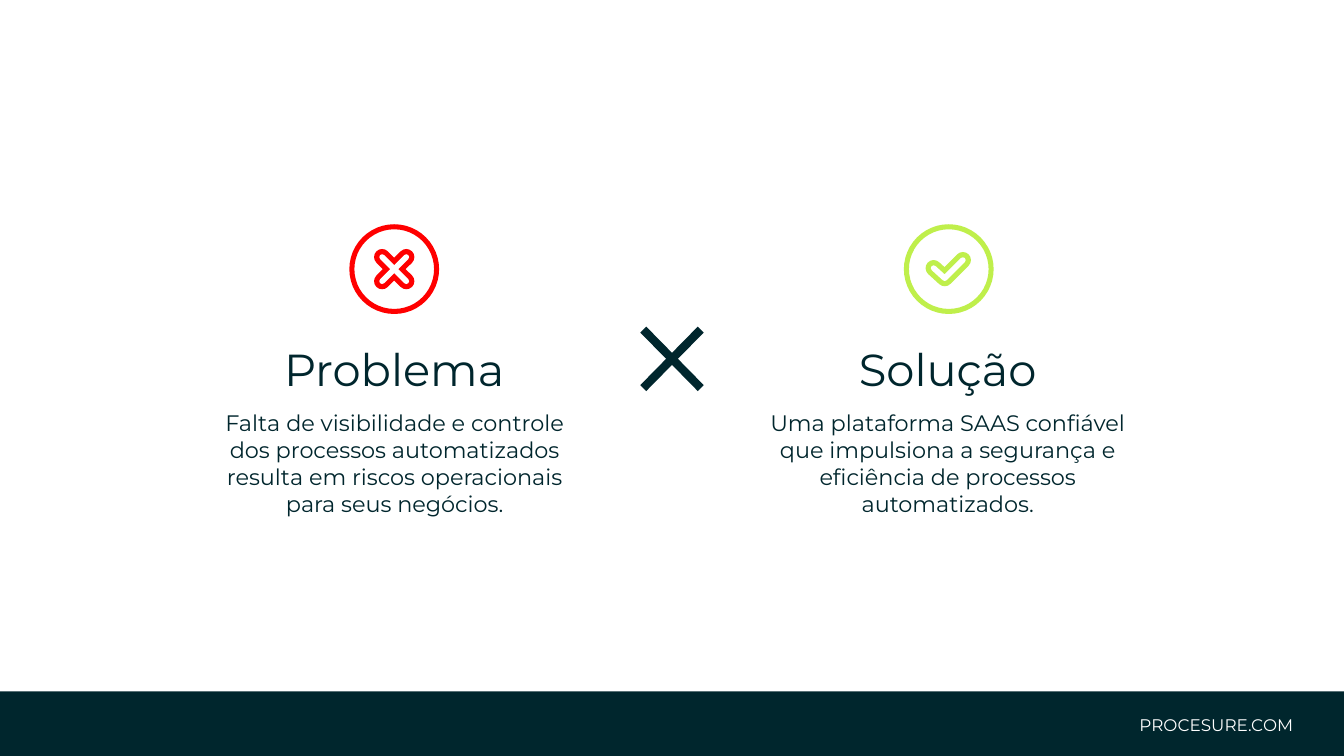
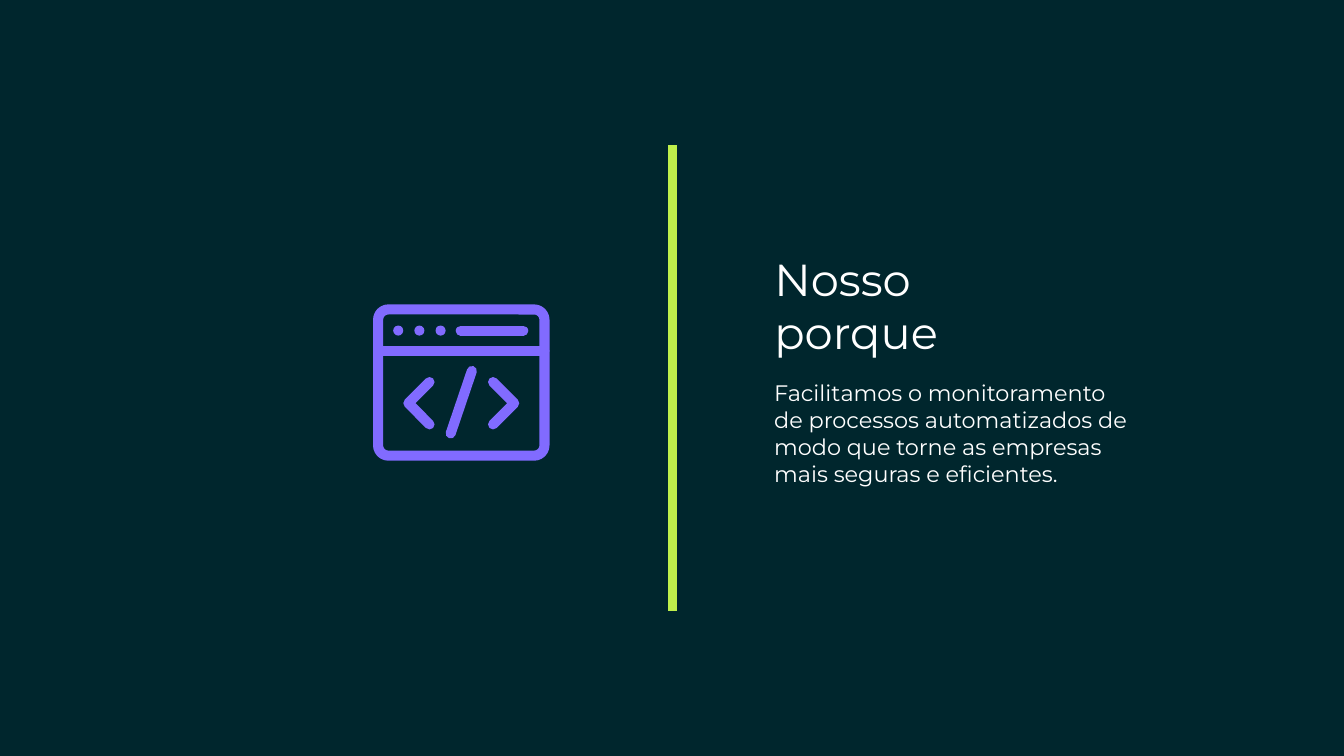
from lxml import etree
from pptx import Presentation
from pptx import util as u
from pptx.dml.color import RGBColor
from pptx.enum import shapes, text
from pptx.oxml.ns import qn

# Shared style: 100 px to the inch
PX = 9144
FONT = "Montserrat"
DARK = RGBColor(0x00, 0x26, 0x2D)
WHITE = RGBColor(0xFF, 0xFF, 0xFF)
RED = RGBColor(0xFF, 0x00, 0x00)
LIME = RGBColor(0xBF, 0xEF, 0x4B)
PURPLE = RGBColor(0x81, 0x6B, 0xFF)
HEADING, BODY, FOOTER = 32, 16, 12
RULE, PEN = 6, 7.2
WIDTH, HEIGHT, MIDDLE = 1333, 750, 667
CENTER, LEFT = text.PP_ALIGN.CENTER, text.PP_ALIGN.LEFT

# Slide 1: heading box, body box, and badge strokes around the badge centre
CARDS = [
    {"heading": "Problema", "heading_box": (262, 327, 258, 75),
     "body": ["Falta de visibilidade e controle dos processos automatizados "
              "resulta em riscos operacionais para seus negócios."],
     "body_box": (209, 393, 365, 130), "color": RED, "center": 391,
     "strokes": [[(-12, -12), (12, 12)], [(-12, 12), (12, -12)]]},
    {"heading": "Solução", "heading_box": (834, 327, 212, 75),
     "body": ["Uma plataforma SAAS confiável",
              "que impulsiona a segurança e eficiência de processos automatizados."],
     "body_box": (744, 393, 392, 130), "color": LIME, "center": 941,
     "strokes": [[(-15, -1), (-4, 9), (14, -9)]]},
]
BADGE_Y, BADGE_SIZE = 267, 84
FOOTER_TEXT = "PROCESURE.COM"

# Slide 2
REASON_TITLE = "Nosso porque"
REASON_BODY = ["Facilitamos o monitoramento de processos automatizados de modo "
               "que torne as empresas mais seguras e eficientes."]
WINDOW = (375, 307, 165, 145)
WINDOW_DOTS = [395, 416, 437]
WINDOW_BAR_Y = 328
WINDOW_STROKES = [
    [(375, 348), (540, 348)],
    [(457, WINDOW_BAR_Y), (519, WINDOW_BAR_Y)],
    [(426, 379), (405, 400), (426, 421)],
    [(489, 379), (510, 400), (489, 421)],
    [(468, 368), (447, 430)],
]


def px(*values):
    return [u.Emu(value * PX) for value in values]


def add_shape(slide, kind, box, fill=None, line=None, points=0):
    shape = slide.shapes.add_shape(kind, *px(*box))
    shape.shadow.inherit = False
    if fill is None:
        shape.fill.background()
    else:
        shape.fill.solid()
        shape.fill.fore_color.rgb = fill
    if line is None:
        shape.line.fill.background()
    else:
        shape.line.color.rgb = line
        shape.line.width = u.Pt(points)
    return shape


def add_stroke(slide, route, color, points, rounded=True):
    """Draw a straight connector, or an open outline with bends."""
    if len(route) == 2:
        shape = slide.shapes.add_connector(
            shapes.MSO_CONNECTOR.STRAIGHT, *px(*route[0], *route[1]))
    else:
        builder = slide.shapes.build_freeform(*route[0], scale=PX)
        builder.add_line_segments(route[1:], close=False)
        shape = builder.convert_to_shape()
        shape.fill.background()
    shape.line.color.rgb = color
    shape.line.width = u.Pt(points)
    properties = shape._element.spPr
    if rounded:
        line = properties.find(qn("a:ln"))
        line.set("cap", "rnd")
        etree.SubElement(line, qn("a:round"))
    etree.SubElement(properties, qn("a:effectLst"))


def write(shape, paragraphs, size, color, align):
    frame = shape.text_frame
    frame.text = "\n".join(paragraphs)
    frame.word_wrap = True
    frame.auto_size = text.MSO_AUTO_SIZE.NONE
    frame.vertical_anchor = text.MSO_ANCHOR.BOTTOM
    frame.margin_left = frame.margin_right = u.Inches(0.1)
    frame.margin_top = frame.margin_bottom = u.Inches(0.1)
    for paragraph in frame.paragraphs:
        paragraph.alignment = align
        for run in paragraph.runs:
            run.font.name = FONT
            run.font.size = u.Pt(size)
            run.font.color.rgb = color


def add_text(slide, box, paragraphs, size, color, align=CENTER):
    write(slide.shapes.add_textbox(*px(*box)), paragraphs, size, color, align)


def set_title(slide, box, title, color, align=CENTER):
    shape = slide.shapes.title
    shape.left, shape.top, shape.width, shape.height = px(*box)
    write(shape, [title], HEADING, color, align)


def add_title_slide(presentation, background):
    slide = presentation.slides.add_slide(presentation.slide_layouts[5])
    slide.background.fill.solid()
    slide.background.fill.fore_color.rgb = background
    return slide


def add_badge(slide, card):
    left, top = card["center"] - BADGE_SIZE // 2, BADGE_Y - BADGE_SIZE // 2
    add_shape(slide, shapes.MSO_SHAPE.OVAL, (left, top, BADGE_SIZE, BADGE_SIZE),
              line=card["color"], points=3.6)
    # A wide coloured stroke under a narrow white one leaves a hollow symbol
    for color, points in ((card["color"], 11.5), (WHITE, 4)):
        for stroke in card["strokes"]:
            route = [(card["center"] + x, BADGE_Y + y) for x, y in stroke]
            add_stroke(slide, route, color, points)


def build_comparison(presentation):
    slide = add_title_slide(presentation, WHITE)
    for index, card in enumerate(CARDS):
        if index == 0:
            set_title(slide, card["heading_box"], card["heading"], DARK)
        else:
            add_text(slide, card["heading_box"], [card["heading"]], HEADING, DARK)
        add_text(slide, card["body_box"], card["body"], BODY, DARK)
        add_badge(slide, card)
    # Large cross between the cards
    for start, end in ((385, 327), (327, 385)):
        add_stroke(slide, [(638, start), (695, end)], DARK, RULE, rounded=False)
    # Footer band
    add_shape(slide, shapes.MSO_SHAPE.RECTANGLE, (0, 686, WIDTH + 1, 64), fill=DARK)
    add_text(slide, (1090, 693, 233, 46), [FOOTER_TEXT], FOOTER, WHITE)


def build_reason(presentation):
    slide = add_title_slide(presentation, DARK)
    # Code window
    window = add_shape(slide, shapes.MSO_SHAPE.ROUNDED_RECTANGLE, WINDOW,
                       line=PURPLE, points=PEN)
    window.adjustments[0] = 0.07
    for x in WINDOW_DOTS:
        add_shape(slide, shapes.MSO_SHAPE.OVAL, (x - 5, WINDOW_BAR_Y - 5, 10, 10),
                  fill=PURPLE)
    for route in WINDOW_STROKES:
        add_stroke(slide, route, PURPLE, PEN)
    # Divider and text
    add_stroke(slide, [(MIDDLE, 606), (MIDDLE, 144)], LIME, RULE, rounded=False)
    set_title(slide, (758, 252, 224, 114), REASON_TITLE, WHITE, LEFT)
    add_text(slide, (758, 363, 379, 130), REASON_BODY, BODY, WHITE, LEFT)


def main():
    presentation = Presentation()
    presentation.slide_width, presentation.slide_height = px(WIDTH, HEIGHT)
    build_comparison(presentation)
    build_reason(presentation)
    presentation.save("out.pptx")


if __name__ == "__main__":
    main()
